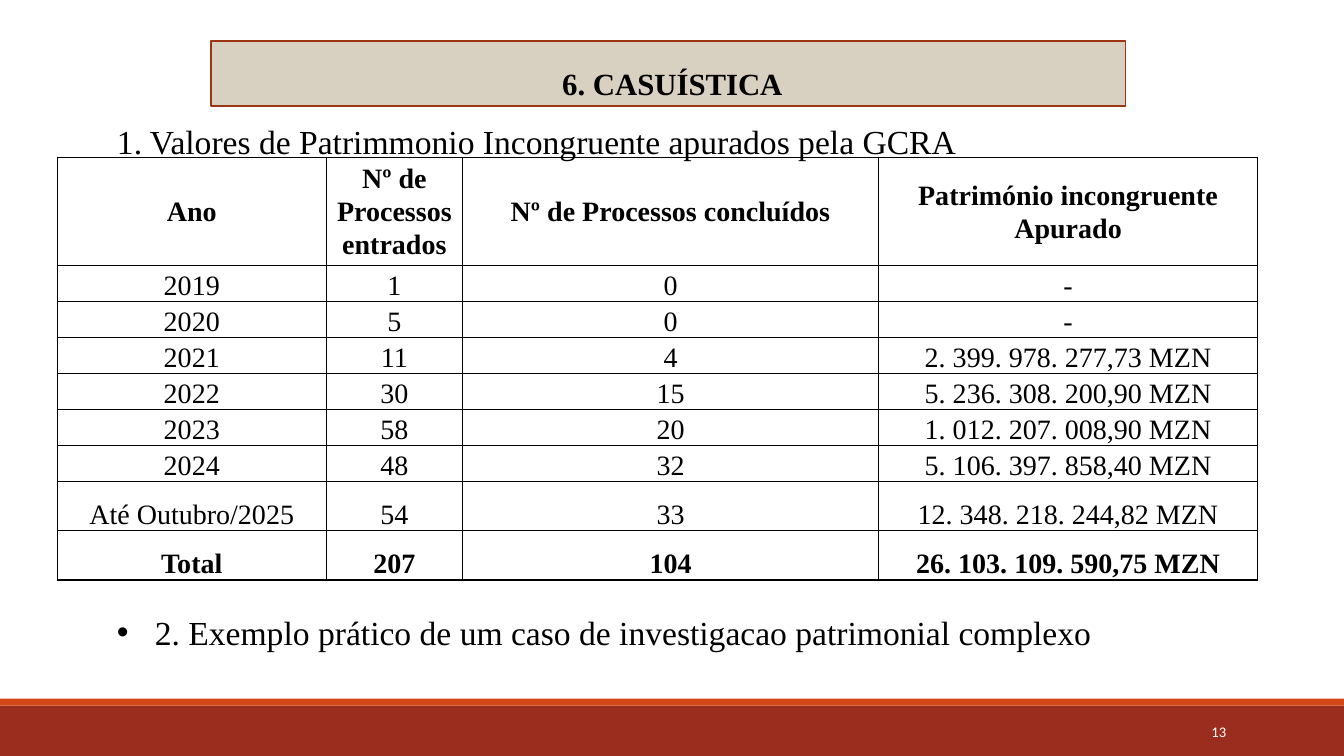
from pptx import Presentation
from pptx.dml.color import RGBColor
from pptx.enum.shapes import MSO_SHAPE as SHAPE
from pptx.enum.text import MSO_ANCHOR as ANCHOR, PP_ALIGN as ALIGN
from pptx.oxml import parse_xml
from pptx.oxml.ns import nsdecls
from pptx.util import Pt

HEADERS = ["Ano", "Nº de Processos entrados", "Nº de Processos concluídos",
           "Património incongruente Apurado"]
CASES = [
    ["2019", "1", "0", "-"],
    ["2020", "5", "0", "-"],
    ["2021", "11", "4", "2. 399. 978. 277,73 MZN"],
    ["2022", "30", "15", "5. 236. 308. 200,90 MZN"],
    ["2023", "58", "20", "1. 012. 207. 008,90 MZN"],
    ["2024", "48", "32", "5. 106. 397. 858,40 MZN"],
    ["Até Outubro/2025", "54", "33", "12. 348. 218. 244,82 MZN"],
]
TOTAL = ["Total", "207", "104", "26. 103. 109. 590,75 MZN"]


def color(value):
    return RGBColor.from_string(value)


def write(p, text, size=20, font="Times New Roman", fill="000000", bold=False,
          align=ALIGN.CENTER, spacing=None, before=0, after=0):
    p.alignment = align
    p.space_before, p.space_after = Pt(before), Pt(after)
    if spacing:
        p.line_spacing = spacing
    r = p.add_run()
    r.text = text
    r.font.size, r.font.name, r.font.bold = Pt(size), font, bold
    r.font.color.rgb = color(fill)


class SlideBuilder:
    line_spacing = 1.07
    border = "000000"

    def __init__(self, slide):
        self.s = slide

    def rect(self, x, y, w, h, fill, line=None):
        sp = self.s.shapes.add_shape(SHAPE.RECTANGLE, Pt(x), Pt(y), Pt(w), Pt(h))
        sp.shadow.inherit = False
        sp.fill.solid()
        sp.fill.fore_color.rgb = color(fill)
        if line:
            sp.line.color.rgb = color(line)
            sp.line.width = Pt(1.25)
        else:
            sp.line.fill.background()

    def textbox(self, x, y, w, h, wrap=True, anchor=ANCHOR.TOP, margin=None):
        tf = self.s.shapes.add_textbox(Pt(x), Pt(y), Pt(w), Pt(h)).text_frame
        tf.word_wrap, tf.vertical_anchor = wrap, anchor
        if margin is not None:
            tf.margin_left = tf.margin_right = Pt(margin)
            tf.margin_top = tf.margin_bottom = Pt(margin)
        return tf

    def bullet(self, p, indent):
        pPr = p._p.get_or_add_pPr()
        pPr.set("marL", str(Pt(indent)))
        pPr.set("indent", str(-Pt(indent)))
        pPr.append(parse_xml(f'<a:buFont {nsdecls("a")} typeface="Arial"/>'))
        pPr.append(parse_xml(f'<a:buChar {nsdecls("a")} char="•"/>'))

    def cell(self, cell, text, bold, anchor):
        cell.margin_left = cell.margin_right = Pt(3.6)
        cell.margin_top = cell.margin_bottom = 0
        cell.vertical_anchor = anchor
        write(cell.text_frame.paragraphs[0], text, bold=bold,
              spacing=self.line_spacing)
        tcPr = cell._tc.get_or_add_tcPr()
        for side in ("lnL", "lnR", "lnT", "lnB"):
            tcPr.append(parse_xml(
                f'<a:{side} {nsdecls("a")} w="{Pt(1)}"><a:solidFill>'
                f'<a:srgbClr val="{self.border}"/></a:solidFill></a:{side}>'))
        cell.fill.background()

    def table(self, x, y, widths, heights, rows):
        table = self.s.shapes.add_table(
            len(rows), len(widths), Pt(x), Pt(y),
            Pt(sum(widths)), Pt(sum(heights))).table
        table.first_row = table.horz_banding = False
        for column, width in zip(table.columns, widths):
            column.width = Pt(width)
        last = len(rows) - 1
        for i, (values, height) in enumerate(zip(rows, heights)):
            table.rows[i].height = Pt(height)
            anchor = ANCHOR.BOTTOM if i else ANCHOR.MIDDLE
            for j, text in enumerate(values):
                self.cell(table.cell(i, j), text, i in (0, last), anchor)


def main():
    prs = Presentation()
    prs.slide_width, prs.slide_height = Pt(960), Pt(540)
    b = SlideBuilder(prs.slides.add_slide(prs.slide_layouts[6]))

    # Footer bands
    b.rect(0, 504, 960, 36, "9B2D1F")
    b.rect(0, 499, 960, 5, "D34817")

    # Title
    b.rect(150.5, 29.5, 653.5, 46, "D8D0C0", line="9C3511")
    tf = b.textbox(153.5, 24.5, 653.5, 56, wrap=False, margin=0)
    write(tf.paragraphs[0], "6. CASUÍSTICA", size=22, bold=True, spacing=Pt(48.5))

    # Slide number
    tf = b.textbox(780, 508.5, 103, 28.5, anchor=ANCHOR.MIDDLE)
    write(tf.paragraphs[0], "13", size=10.5, font="Calibri", fill="FFFFFF",
          align=ALIGN.RIGHT)

    # Topics above and below the table
    tf = b.textbox(76.5, 80.5, 813.5, 391)
    topic = dict(size=24, align=ALIGN.JUSTIFY, spacing=b.line_spacing, after=8)
    write(tf.paragraphs[0],
          "1. Valores de Patrimmonio Incongruente apurados pela GCRA", **topic)
    p = tf.add_paragraph()
    write(p, "2. Exemplo prático de um caso de investigacao patrimonial complexo",
          before=312, **topic)
    b.bullet(p, 27)

    # Case table
    b.table(41, 112.3, [192, 97.5, 297, 271],
            [77] + [25.7] * 6 + [35.3] * 2, [HEADERS, *CASES, TOTAL])

    prs.save("out.pptx")


if __name__ == "__main__":
    main()
